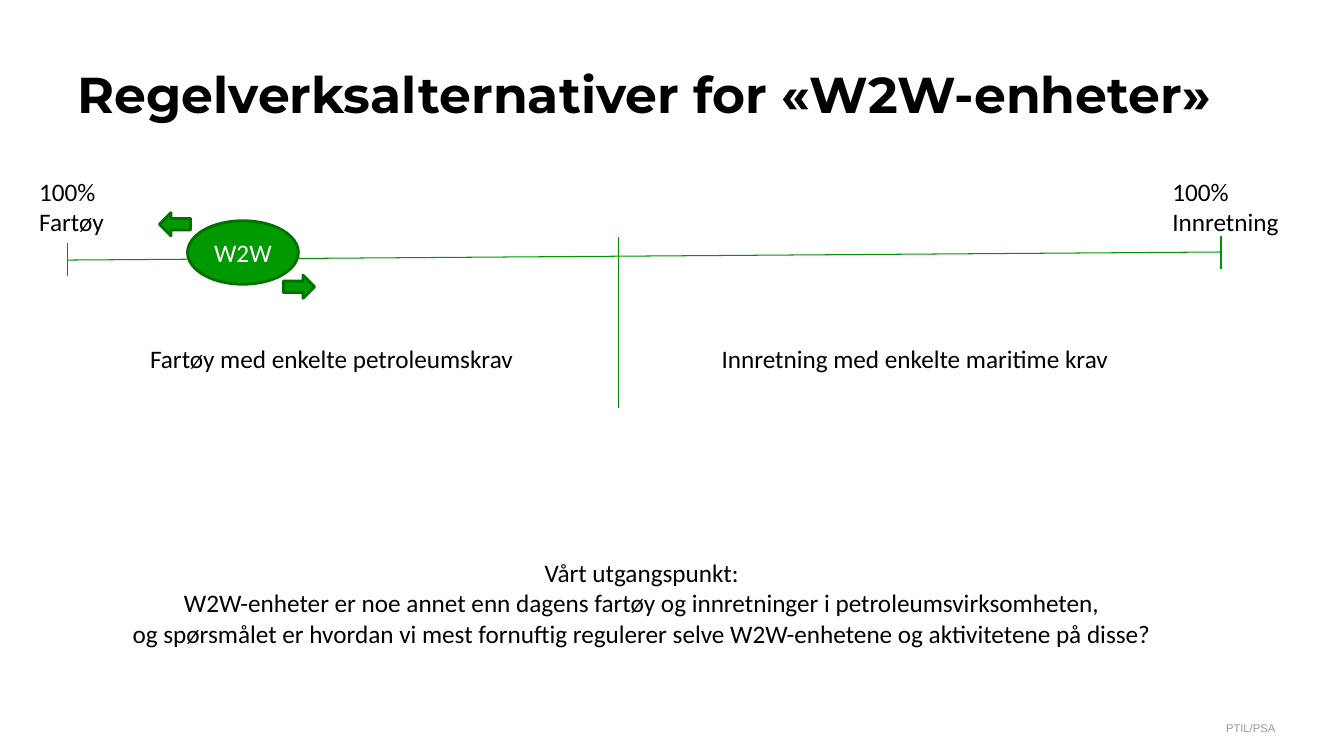
from lxml import etree
from pptx import Presentation
from pptx.dml.color import RGBColor
from pptx.enum.shapes import MSO_CONNECTOR, MSO_SHAPE
from pptx.enum.text import MSO_ANCHOR, PP_ALIGN
from pptx.oxml.ns import qn
from pptx.util import Inches, Pt

STRAIGHT = MSO_CONNECTOR.STRAIGHT
OVAL, LEFT_ARROW = MSO_SHAPE.OVAL, MSO_SHAPE.LEFT_ARROW
TOP, MIDDLE = MSO_ANCHOR.TOP, MSO_ANCHOR.MIDDLE
LEFT, CENTER, RIGHT = PP_ALIGN.LEFT, PP_ALIGN.CENTER, PP_ALIGN.RIGHT

BLACK = RGBColor(0x00, 0x00, 0x00)
WHITE = RGBColor(0xFF, 0xFF, 0xFF)
GRAY = RGBColor(0x99, 0x99, 0x99)
AXIS_GREEN = RGBColor(0x00, 0x96, 0x00)
FILL_GREEN = RGBColor(0x00, 0x99, 0x00)
EDGE_GREEN = RGBColor(0x00, 0x71, 0x00)

SLIDE_W, SLIDE_H = 13.33, 7.5
TITLE_BOX = (0.67, 0.3, 11.98, 1.25)
SCALE_BOX = (0.67, 1.7, 11.44, 2.35)
STATEMENT_BOX = (0.99, 5.48, 10.75, 1.01)
FOOTER_BOX = (11.82, 7.16, 0.83, 0.13)


def write(frame, lines, size=18, font="Calibri", color=BLACK, bold=False, align=LEFT):
    frame.text = "\n".join(lines)
    for paragraph in frame.paragraphs:
        paragraph.alignment = align
        for run in paragraph.runs:
            run.font.size = Pt(size)
            run.font.name = font
            run.font.bold = bold
            run.font.color.rgb = color


def add_text(slide, box, lines, wrap=False, anchor=TOP, inset=None, **style):
    frame = slide.shapes.add_textbox(*map(Inches, box)).text_frame
    frame.word_wrap = wrap
    frame.vertical_anchor = anchor
    if inset is not None:
        frame.margin_left = frame.margin_right = Inches(inset)
        frame.margin_top = frame.margin_bottom = Inches(inset)
    write(frame, lines, **style)


def add_line(slide, x1, y1, x2, y2):
    line = slide.shapes.add_connector(STRAIGHT, *map(Inches, (x1, y1, x2, y2)))
    line.line.color.rgb = AXIS_GREEN
    line.line.width = Pt(0.75)
    etree.SubElement(line._element.spPr, qn("a:effectLst"))


def add_green_shape(slide, kind, box, rotation=0):
    shape = slide.shapes.add_shape(kind, *map(Inches, box))
    shape.shadow.inherit = False
    shape.fill.solid()
    shape.fill.fore_color.rgb = FILL_GREEN
    shape.line.color.rgb = EDGE_GREEN
    shape.line.width = Pt(2)
    shape.rotation = rotation
    return shape


def build_title(slide, box):
    add_text(slide, box, ["Regelverksalternativer for «W2W-enheter»"], wrap=True,
             anchor=MIDDLE, size=36, font="Montserrat", bold=True)


def build_scale(slide, box):
    left, top, width, height = box
    right, bottom = left + width, top + height
    middle = left + 0.478 * width
    add_line(slide, left, top + 0.88, right, top + 0.8)

    add_text(slide, (left - 0.38, top, 0.85, 0.71), ["100%", "Fartøy"])
    add_text(slide, (right - 0.58, top, 1.27, 0.71), ["100%", "Innretning"])

    for x, tick_top, tick_bottom in (
        (left, top + 0.71, top + 1.04),
        (right, top + 0.64, top + 0.97),
        (middle, top + 0.65, bottom),
    ):
        add_line(slide, x, tick_top, x, tick_bottom)

    build_unit(slide, (left + 1.19, top + 0.49, 1.1, 0.63))

    add_text(slide, (left + 0.72, top + 1.66, 3.84, 0.4),
             ["Fartøy med enkelte petroleumskrav"])
    add_text(slide, (middle + 0.92, top + 1.66, 4.14, 0.4),
             ["Innretning med enkelte maritime krav"])


def build_unit(slide, box):
    left, top, width, height = box
    unit = add_green_shape(slide, OVAL, box)
    unit.text_frame.vertical_anchor = MIDDLE
    write(unit.text_frame, ["W2W"], color=WHITE, align=CENTER)
    add_green_shape(slide, LEFT_ARROW, (left - 0.28, top - 0.08, 0.31, 0.23))
    add_green_shape(slide, LEFT_ARROW,
                    (left + width - 0.15, top + height - 0.09, 0.31, 0.23), rotation=180)


def build_statement(slide, box):
    add_text(slide, box, [
        "Vårt utgangspunkt:",
        "W2W-enheter er noe annet enn dagens fartøy og innretninger i petroleumsvirksomheten,",
        "og spørsmålet er hvordan vi mest fornuftig regulerer selve W2W-enhetene "
        "og aktivitetene på disse?",
    ], align=CENTER)


def build_footer(slide, box):
    add_text(slide, box, ["PTIL/PSA"], wrap=True, inset=0, size=8, font="Arial",
             color=GRAY, align=RIGHT)


def main():
    deck = Presentation()
    deck.slide_width, deck.slide_height = Inches(SLIDE_W), Inches(SLIDE_H)
    slide = deck.slides.add_slide(deck.slide_layouts[6])
    build_footer(slide, FOOTER_BOX)
    build_title(slide, TITLE_BOX)
    build_scale(slide, SCALE_BOX)
    build_statement(slide, STATEMENT_BOX)
    deck.save("out.pptx")


if __name__ == "__main__":
    main()
